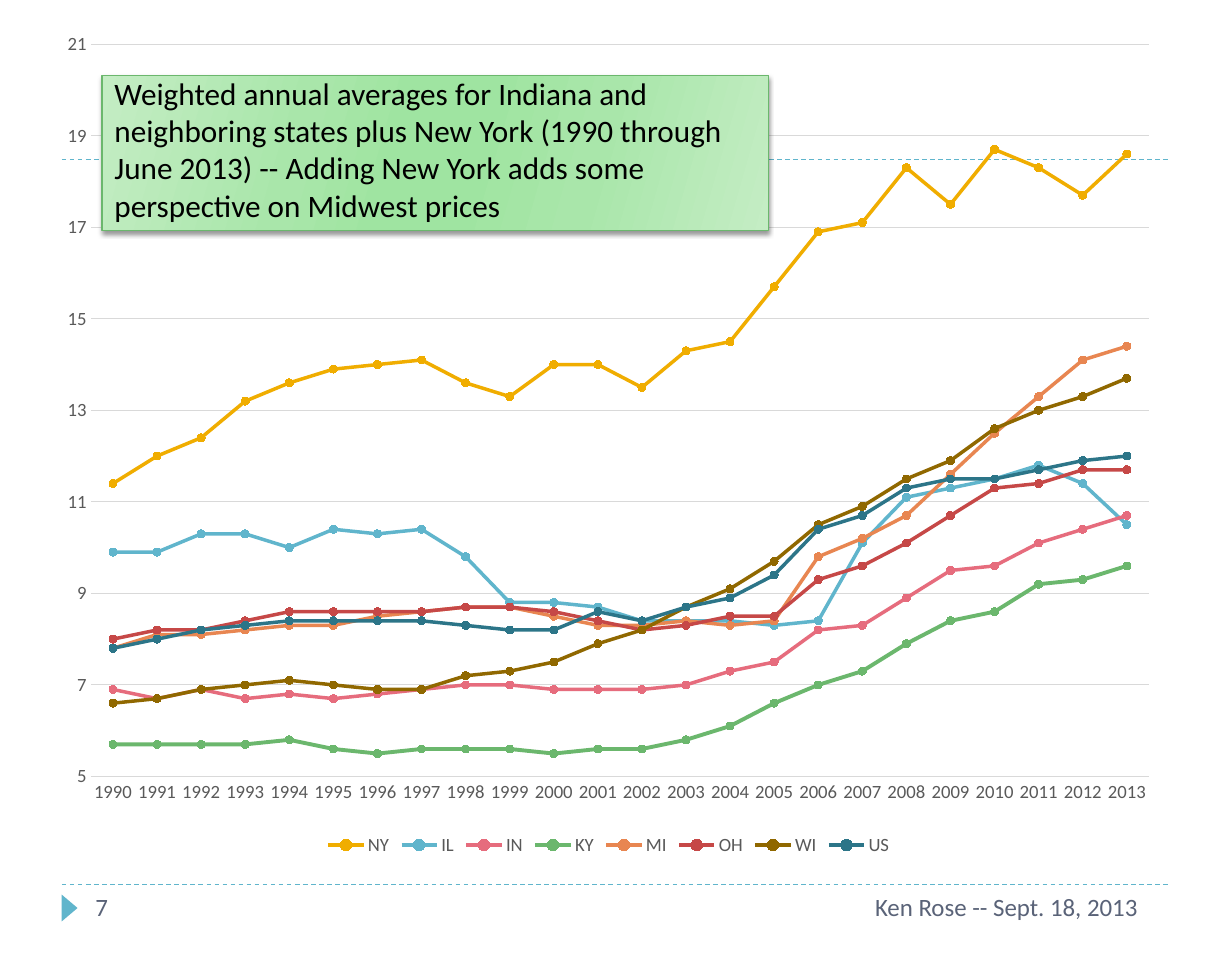
from lxml.etree import SubElement
from pptx import Presentation
from pptx.chart.data import CategoryChartData
from pptx.dml.color import RGBColor
from pptx.enum.chart import XL_CHART_TYPE, XL_LEGEND_POSITION, XL_MARKER_STYLE, XL_TICK_MARK
from pptx.enum.dml import MSO_LINE
from pptx.enum.shapes import MSO_CONNECTOR, MSO_SHAPE
from pptx.enum.text import MSO_ANCHOR, MSO_AUTO_SIZE, PP_ALIGN
from pptx.oxml import parse_xml
from pptx.oxml.ns import nsdecls, qn
from pptx.util import Cm, Pt

FONT = "Calibri"
TEAL, GREEN, SLATE, GRAY, PALE = "60B5CC", "6BB76D", "5A6378", "595959", "D9D9D9"
TITLE = ("Weighted annual averages for Indiana and neighboring states plus New York "
         "(1990 through June 2013) -- Adding New York adds some perspective on Midwest prices")
TITLE_BOX = (2.31, 1.7, 15.09, 3.51)
CHART_BOX = (1.04, 0.43, 25.48, 19.05)
PLOT = {"x": 0.04, "y": 0.03, "w": 0.94, "h": 0.87}
STOPS = [(0, "C4EDC4"), (30, "A9E6AA"), (45, "9FE4A1"),
         (55, "9FE4A1"), (73, "A9E6AA"), (100, "C4EDC4")]
RULES = [20.02, 3.61]
NOTES = [("Ken Rose -- Sept. 18, 2013", (19.53, 20.02, 6.99, 1.14)),
         ("7", (1.88, 20.02, 6.05, 1.14))]
YEARS = range(1990, 2014)
PRICES = [
    ("NY", "F0AD00", 2.25, [11.4, 12, 12.4, 13.2, 13.6, 13.9, 14, 14.1, 13.6, 13.3, 14, 14,
                            13.5, 14.3, 14.5, 15.7, 16.9, 17.1, 18.3, 17.5, 18.7, 18.3, 17.7, 18.6]),
    ("IL", TEAL, 2.25, [9.9, 9.9, 10.3, 10.3, 10, 10.4, 10.3, 10.4, 9.8, 8.8, 8.8, 8.7,
                        8.4, 8.4, 8.4, 8.3, 8.4, 10.1, 11.1, 11.3, 11.5, 11.8, 11.4, 10.5]),
    ("IN", "E66C7D", 2.25, [6.9, 6.7, 6.9, 6.7, 6.8, 6.7, 6.8, 6.9, 7, 7, 6.9, 6.9,
                            6.9, 7, 7.3, 7.5, 8.2, 8.3, 8.9, 9.5, 9.6, 10.1, 10.4, 10.7]),
    ("KY", GREEN, 2.5, [5.7, 5.7, 5.7, 5.7, 5.8, 5.6, 5.5, 5.6, 5.6, 5.6, 5.5, 5.6,
                        5.6, 5.8, 6.1, 6.6, 7, 7.3, 7.9, 8.4, 8.6, 9.2, 9.3, 9.6]),
    ("MI", "E88651", 2.25, [7.8, 8.1, 8.1, 8.2, 8.3, 8.3, 8.5, 8.6, 8.7, 8.7, 8.5, 8.3,
                            8.3, 8.4, 8.3, 8.4, 9.8, 10.2, 10.7, 11.6, 12.5, 13.3, 14.1, 14.4]),
    ("OH", "C64847", 2.25, [8, 8.2, 8.2, 8.4, 8.6, 8.6, 8.6, 8.6, 8.7, 8.7, 8.6, 8.4,
                            8.2, 8.3, 8.5, 8.5, 9.3, 9.6, 10.1, 10.7, 11.3, 11.4, 11.7, 11.7]),
    ("WI", "906800", 2.25, [6.6, 6.7, 6.9, 7, 7.1, 7, 6.9, 6.9, 7.2, 7.3, 7.5, 7.9,
                            8.2, 8.7, 9.1, 9.7, 10.5, 10.9, 11.5, 11.9, 12.6, 13, 13.3, 13.7]),
    ("US", "2C7588", 2.25, [7.8, 8, 8.2, 8.3, 8.4, 8.4, 8.4, 8.4, 8.3, 8.2, 8.2, 8.6,
                            8.4, 8.7, 8.9, 9.4, 10.4, 10.7, 11.3, 11.5, 11.5, 11.7, 11.9, 12]),
]


def paint(color, value):
    color.rgb = RGBColor.from_string(value)


def stroke(line, value, width):
    paint(line.fill.fore_color if line.fill.solid() else line.color, value)
    line.width = Pt(width)


def style(font, size, value):
    font.name, font.size = FONT, Pt(size)
    paint(font.color, value)


def write(frame, words, size, value, anchor):
    frame.text = words
    frame.word_wrap = True
    frame.auto_size = MSO_AUTO_SIZE.NONE
    frame.vertical_anchor = anchor
    frame.margin_left = frame.margin_right = Cm(0.28)
    frame.margin_top = frame.margin_bottom = Cm(0.15)
    para = frame.paragraphs[0]
    para.alignment = PP_ALIGN.LEFT
    style(para.runs[0].font, size, value)


def add_rule(shapes, top):
    rule = shapes.add_connector(MSO_CONNECTOR.STRAIGHT, Cm(1.4), Cm(top), Cm(26.49), Cm(top))
    stroke(rule.line, TEAL, 0.75)
    rule.line.dash_style = MSO_LINE.DASH
    SubElement(rule.element.spPr, qn("a:effectLst"))


def add_prices(shapes):
    data = CategoryChartData(number_format="General")
    data.categories = [str(year) for year in YEARS]
    for name, _, _, values in PRICES:
        data.add_series(name, values)
    chart = shapes.add_chart(XL_CHART_TYPE.LINE_MARKERS, *map(Cm, CHART_BOX), data).chart
    style(chart.font, 10, "000000")
    chart.has_title = False
    chart.has_legend = True
    chart.legend.position = XL_LEGEND_POSITION.BOTTOM
    chart.legend.include_in_layout = False
    style(chart.legend.font, 12, GRAY)
    for axis in (chart.category_axis, chart.value_axis):
        axis.major_tick_mark = axis.minor_tick_mark = XL_TICK_MARK.NONE
        style(axis.tick_labels.font, 12, GRAY)
    stroke(chart.category_axis.format.line, PALE, 0.75)
    scale = chart.value_axis
    scale.minimum_scale, scale.maximum_scale, scale.major_unit = 5, 21, 2
    scale.format.line.fill.background()
    stroke(scale.major_gridlines.format.line, PALE, 0.75)
    chart.plots[0].vary_by_categories = False
    for series, (_, color, width, _) in zip(chart.plots[0].series, PRICES):
        series.smooth = False
        stroke(series.format.line, color, width)
        dot = series.marker
        dot.style, dot.size = XL_MARKER_STYLE.CIRCLE, 5
        dot.format.fill.solid()
        paint(dot.format.fill.fore_color, color)
        stroke(dot.format.line, color, 0.75)
    area = chart.element.find(".//" + qn("c:plotArea"))
    for old in area.findall(qn("c:layout")):
        area.remove(old)
    modes = '<c:layoutTarget val="inner"/><c:xMode val="edge"/><c:yMode val="edge"/>'
    parts = "".join(f'<c:{key} val="{part}"/>' for key, part in PLOT.items())
    area.insert(0, parse_xml(f'<c:layout {nsdecls("c")}><c:manualLayout>{modes}{parts}'
                             '</c:manualLayout></c:layout>'))


def set_title(title):
    title.left, title.top, title.width, title.height = map(Cm, TITLE_BOX)
    write(title.text_frame, TITLE, 20, "000000", MSO_ANCHOR.BOTTOM)
    title.fill.gradient()
    title.fill.gradient_angle = 344
    stops = title.element.spPr.find(".//" + qn("a:gsLst"))
    for old in list(stops):
        stops.remove(old)
    for place, color in STOPS:
        stop = SubElement(stops, qn("a:gs"), pos=str(place * 1000))
        SubElement(stop, qn("a:srgbClr"), val=color)
    stroke(title.line, GREEN, 0.75)
    title.element.spPr.append(parse_xml(
        f'<a:effectLst {nsdecls("a")}><a:outerShdw blurRad="{Pt(3)}" dist="{Pt(2)}" dir="5400000" '
        'rotWithShape="0"><a:srgbClr val="000000"><a:alpha val="40000"/></a:srgbClr>'
        '</a:outerShdw></a:effectLst>'))
    title.element.getparent().append(title.element)


def main():
    deck = Presentation()
    deck.slide_width, deck.slide_height = Cm(27.89), Cm(21.59)
    slide = deck.slides.add_slide(deck.slide_layouts[5])
    shapes = slide.shapes
    for top in RULES:
        add_rule(shapes, top)
    arrow = shapes.add_shape(MSO_SHAPE.ISOSCELES_TRIANGLE, Cm(1.27), Cm(20.37), Cm(0.61), Cm(0.36))
    arrow.rotation = 90
    arrow.shadow.inherit = False
    arrow.fill.solid()
    paint(arrow.fill.fore_color, TEAL)
    arrow.line.fill.background()
    for words, box in NOTES:
        note = shapes.add_textbox(*map(Cm, box))
        write(note.text_frame, words, 16, SLATE, MSO_ANCHOR.TOP)
    add_prices(shapes)
    set_title(shapes.title)
    deck.save("out.pptx")


if __name__ == "__main__":
    main()
